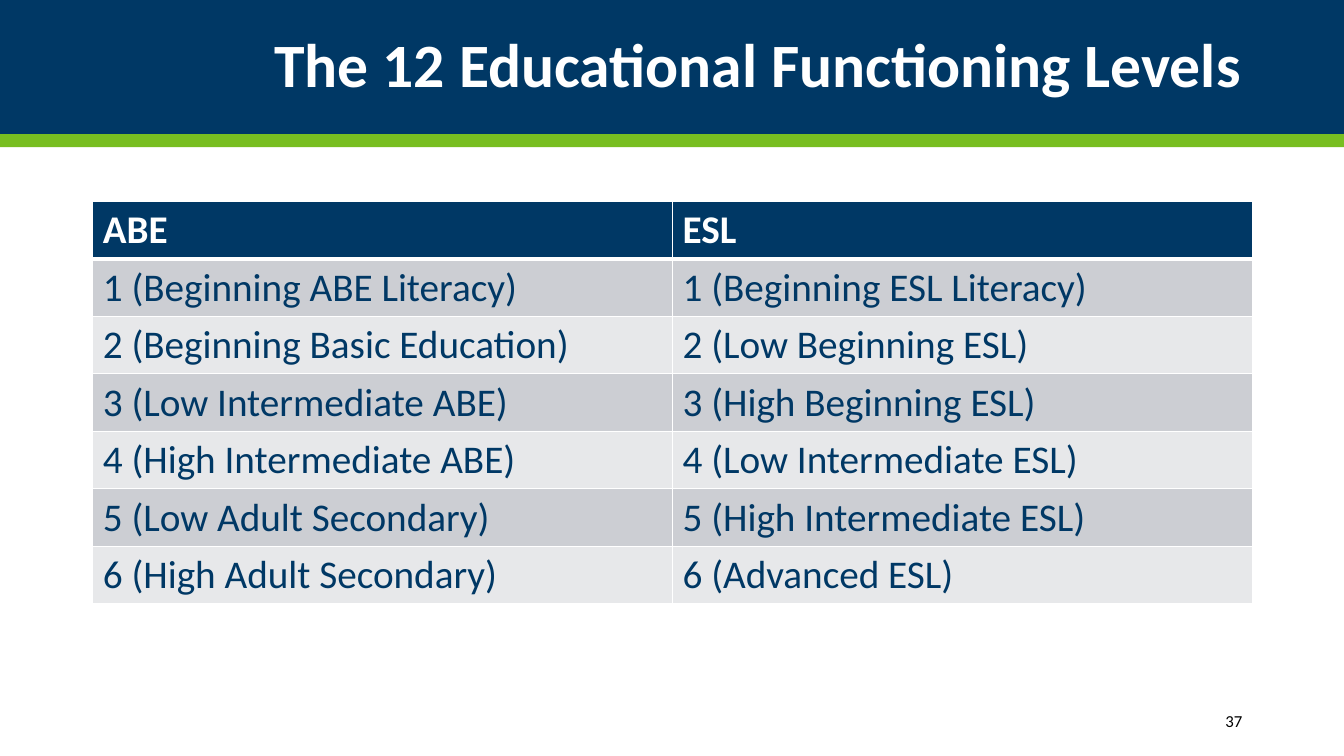
from lxml.etree import SubElement
from pptx import Presentation
from pptx.dml.color import RGBColor
from pptx.enum.shapes import MSO_SHAPE
from pptx.enum.text import MSO_ANCHOR, PP_ALIGN
from pptx.oxml.ns import qn
from pptx.util import Inches, Pt

NAVY = RGBColor(0x00, 0x38, 0x65)
GREEN = RGBColor(0x78, 0xBE, 0x21)
WHITE = RGBColor(0xFF, 0xFF, 0xFF)
BLACK = RGBColor(0x00, 0x00, 0x00)
GRAY = RGBColor(0xCC, 0xCE, 0xD3)
LIGHT_GRAY = RGBColor(0xE7, 0xE8, 0xEA)

LEVELS = [
    ("ABE", "ESL"),
    ("1 (Beginning ABE Literacy)", "1 (Beginning ESL Literacy)"),
    ("2 (Beginning Basic Education)", "2 (Low Beginning ESL)"),
    ("3 (Low Intermediate ABE)", "3 (High Beginning ESL)"),
    ("4 (High Intermediate ABE)", "4 (Low Intermediate ESL)"),
    ("5 (Low Adult Secondary)", "5 (High Intermediate ESL)"),
    ("6 (High Adult Secondary)", "6 (Advanced ESL)"),
]


class SlideBuilder:
    font_name = "Calibri"

    def __init__(self, slide):
        self.slide = slide

    def style(self, paragraph, size, color, bold=False):
        font = paragraph.font
        font.name = self.font_name
        font.size = Pt(size)
        font.bold = bold
        font.color.rgb = color

    def band(self, top, height, color):
        band = self.slide.shapes.add_shape(
            MSO_SHAPE.RECTANGLE, 0, Inches(top), Inches(13.33), Inches(height))
        band.shadow.inherit = False
        band.fill.solid()
        band.fill.fore_color.rgb = color
        band.line.fill.background()

    def right_text(self, text, left, top, width, height, size, color,
                   bold=False, line_spacing=1.0):
        frame = self.slide.shapes.add_textbox(
            Inches(left), Inches(top), Inches(width), Inches(height)).text_frame
        frame.word_wrap = True
        frame.vertical_anchor = MSO_ANCHOR.MIDDLE
        paragraph = frame.paragraphs[0]
        paragraph.text = text
        paragraph.alignment = PP_ALIGN.RIGHT
        paragraph.line_spacing = line_spacing
        self.style(paragraph, size, color, bold)

    def border(self, cell, side, width):
        line = SubElement(cell._tc.get_or_add_tcPr(), qn(f"a:{side}"), w=str(Pt(width)))
        fill = SubElement(line, qn("a:solidFill"))
        SubElement(fill, qn("a:srgbClr"), val=str(WHITE))

    def table(self, rows, left, top, column_width, row_height, size):
        columns = len(rows[0])
        table = self.slide.shapes.add_table(
            len(rows), columns, Inches(left), Inches(top),
            Inches(column_width * columns), Inches(row_height * len(rows))).table
        for r, texts in enumerate(rows):
            header = r == 0
            fill = NAVY if header else GRAY if r % 2 else LIGHT_GRAY
            for c, text in enumerate(texts):
                cell = table.cell(r, c)
                for side in ("lnL", "lnR", "lnT", "lnB"):
                    thick = (side == "lnB" and header) or (side == "lnT" and r == 1)
                    self.border(cell, side, 3 if thick else 1)
                cell.fill.solid()
                cell.fill.fore_color.rgb = fill
                cell.text = text
                self.style(cell.text_frame.paragraphs[0], size,
                           WHITE if header else NAVY, header)


def main():
    presentation = Presentation()
    presentation.slide_width = Inches(13.33)
    presentation.slide_height = Inches(7.5)
    builder = SlideBuilder(presentation.slides.add_slide(presentation.slide_layouts[6]))
    builder.band(0, 1.33, NAVY)
    builder.band(1.33, 0.13, GREEN)
    builder.right_text("The 12 Educational Functioning Levels",
                       0.92, 0.17, 11.5, 1, 44, WHITE, bold=True, line_spacing=0.9)
    builder.table(LEVELS, 0.92, 2, 5.75, 0.57, 28)
    builder.right_text("37", 10.82, 6.95, 1.6, 0.4, 12, BLACK)
    presentation.save("out.pptx")


if __name__ == "__main__":
    main()
